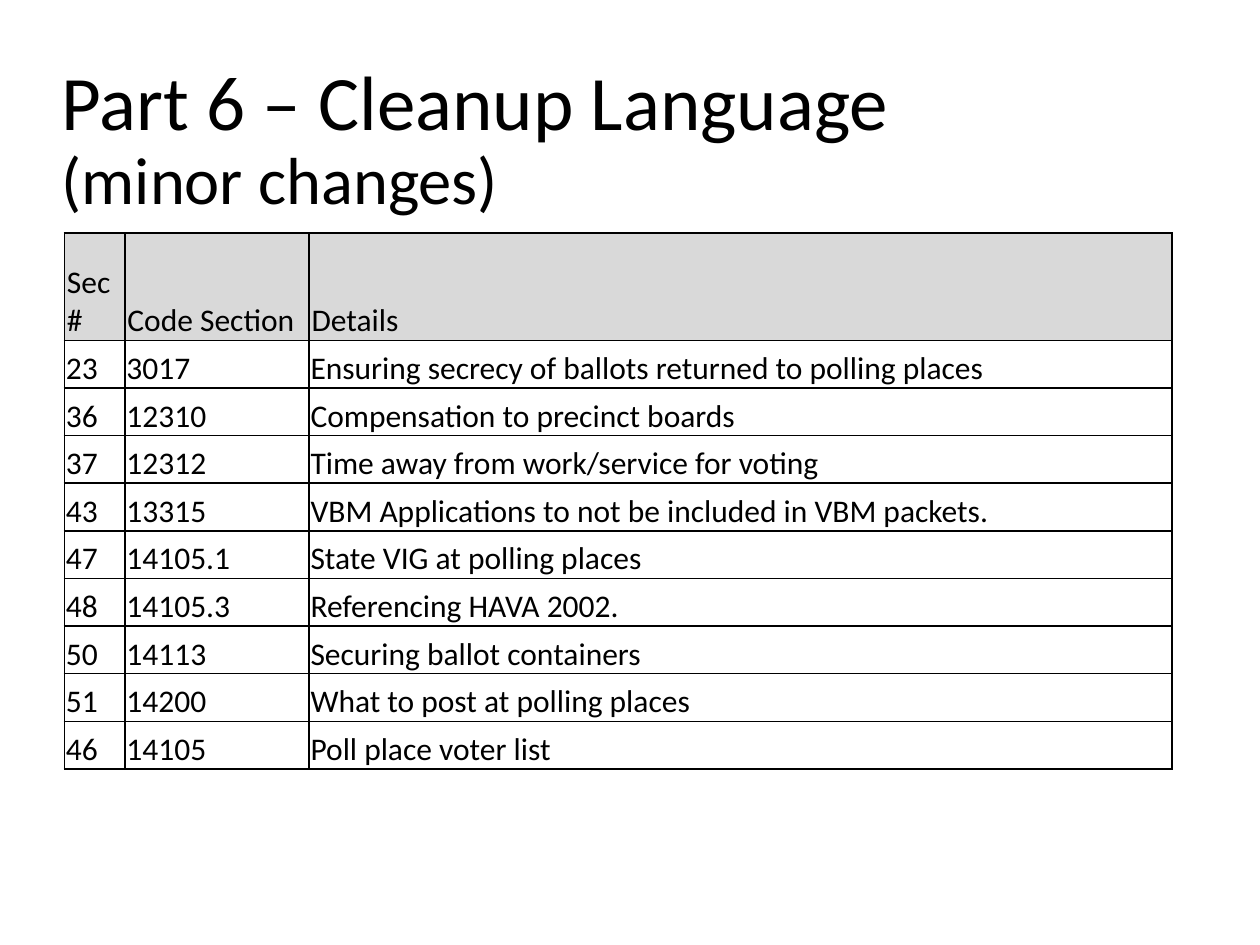
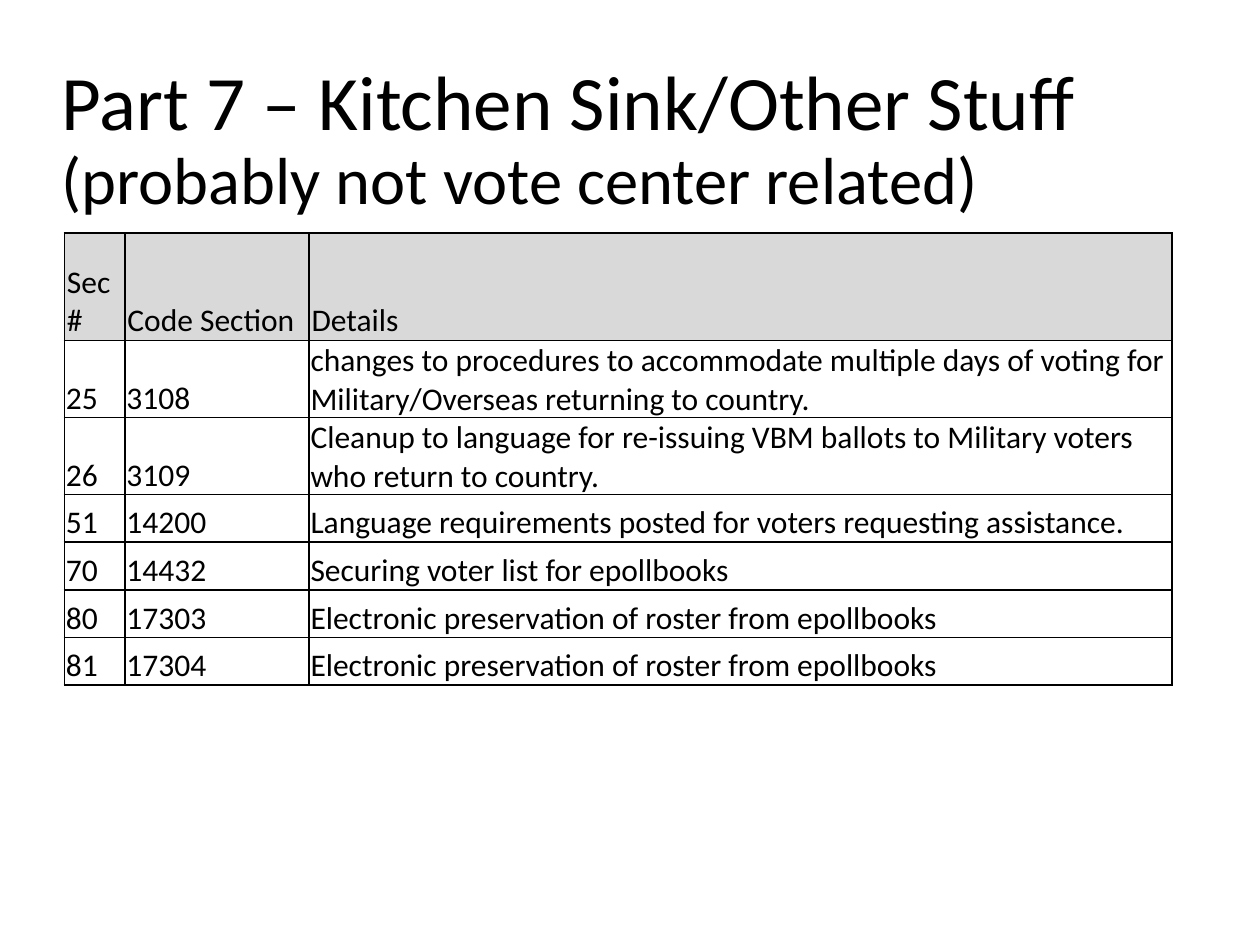
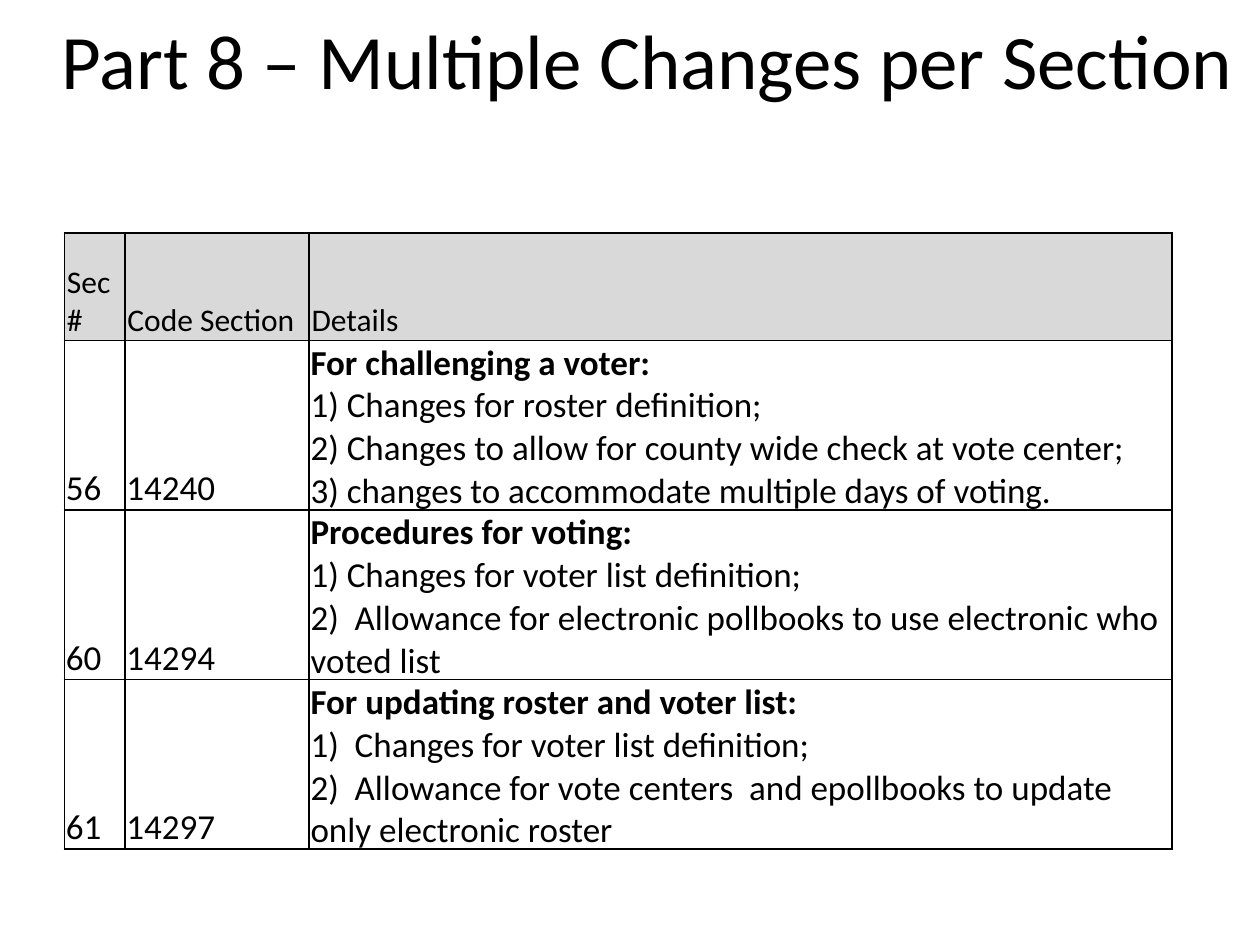
from lxml.etree import SubElement
from pptx import Presentation
from pptx.dml.color import RGBColor
from pptx.enum.text import MSO_ANCHOR
from pptx.oxml.ns import qn
from pptx.util import Cm, Pt

BLACK = RGBColor(0x00, 0x00, 0x00)
GREY = RGBColor(0xD9, 0xD9, 0xD9)
FONT = "Calibri"
HEAD = ("Sec#", "Code Section", "Details")
COLS = (1.22, 3.71, 17.4)

# Each part: title lines, body size, bottom inset of the title, table rows
PARTS = [
    ("Part 6 – Cleanup Language\n(minor changes)", 18, 0.13, [
        ("23", "3017", "Ensuring secrecy of ballots returned to polling places"),
        ("36", "12310", "Compensation to precinct boards"),
        ("37", "12312", "Time away from work/service for voting"),
        ("43", "13315", "VBM Applications to not be included in VBM packets."),
        ("47", "14105.1", "State VIG at polling places"),
        ("48", "14105.3", "Referencing HAVA 2002."),
        ("50", "14113", "Securing ballot containers"),
        ("51", "14200", "What to post at polling places"),
        ("46", "14105", "Poll place voter list"),
    ]),
    ("Part 7 – Kitchen Sink/Other Stuff\n(probably not vote center related)", 18, 0.13, [
        ("25", "3108", "changes to procedures to accommodate multiple days of voting for "
                       "Military/Overseas returning to country."),
        ("26", "3109", "Cleanup to language for re-issuing VBM ballots to Military voters "
                       "who return to country."),
        ("51", "14200", "Language requirements posted for voters requesting assistance."),
        ("70", "14432", "Securing voter list for epollbooks"),
        ("80", "17303", "Electronic preservation of roster from epollbooks"),
        ("81", "17304", "Electronic preservation of roster from epollbooks"),
    ]),
    ("Part 8 – Multiple Changes per Section", 20, 3.25, [
        ("56", "14240", "For challenging a voter:\n"
                        "1) Changes for roster definition;\n"
                        "2) Changes to allow for county wide check at vote center;\n"
                        "3) changes to accommodate multiple days of voting."),
        ("60", "14294", "Procedures for voting:\n"
                        "1) Changes for voter list definition;\n"
                        "2)  Allowance for electronic pollbooks to use electronic who voted list"),
        ("61", "14297", "For updating roster and voter list:\n"
                        "1)  Changes for voter list definition;\n"
                        "2)  Allowance for vote centers  and epollbooks to update "
                        "only electronic roster"),
    ]),
]


def write(frame, text, size=18, rest=None, bold=False, space=None):
    """Set the lines of one paragraph; size and bold apply to the first, rest to the others."""
    para = frame.paragraphs[0]
    para.line_spacing = space
    for i, line in enumerate(text.split("\n")):
        if i:
            para.add_line_break()
        run = para.add_run()
        run.text = line
        run.font.name = FONT
        run.font.size = Pt(rest if i and rest else size)
        run.font.bold = bold and i == 0
        run.font.color.rgb = BLACK


def border(cell):
    """Draw a thin black line on all four sides, ahead of the fill."""
    props = cell._tc.get_or_add_tcPr()
    for i, side in enumerate(("a:lnL", "a:lnR", "a:lnT", "a:lnB")):
        line = SubElement(props, qn(side), w=str(Pt(1)))
        fill = SubElement(line, qn("a:solidFill"))
        SubElement(fill, qn("a:srgbClr"), val=str(BLACK))
        props.insert(i, line)


deck = Presentation()
deck.slide_width, deck.slide_height = Cm(25.4), Cm(19.05)

for title, size, foot, rows in PARTS:
    slide = deck.slides.add_slide(deck.slide_layouts[6])

    # Title
    frame = slide.shapes.add_textbox(Cm(0.99), Cm(1.02), Cm(24.26), Cm(3.68)).text_frame
    frame.word_wrap = True
    frame.vertical_anchor = MSO_ANCHOR.MIDDLE
    frame.margin_bottom = Cm(foot)
    write(frame, title, size=44, rest=38, space=0.9)

    # Table
    tall = [2.16] + [0.96] * len(rows)
    table = slide.shapes.add_table(len(tall), len(COLS), Cm(1.3), Cm(4.7),
                                   Cm(sum(COLS)), Cm(sum(tall))).table
    for col, width in zip(table.columns, COLS):
        col.width = Cm(width)
    for r, (texts, height) in enumerate(zip([HEAD] + rows, tall)):
        table.rows[r].height = Cm(height)
        for c, text in enumerate(texts):
            cell = table.cell(r, c)
            cell.vertical_anchor = MSO_ANCHOR.BOTTOM
            inset = Cm(0.03 if r else 0.05)
            cell.margin_left = cell.margin_right = cell.margin_top = inset
            cell.margin_bottom = 0
            if r:
                cell.fill.background()
            else:
                cell.fill.solid()
                cell.fill.fore_color.rgb = GREY
            border(cell)
            write(cell.text_frame, text, size=size if r else 18, bold="\n" in text)

deck.save("out.pptx")
